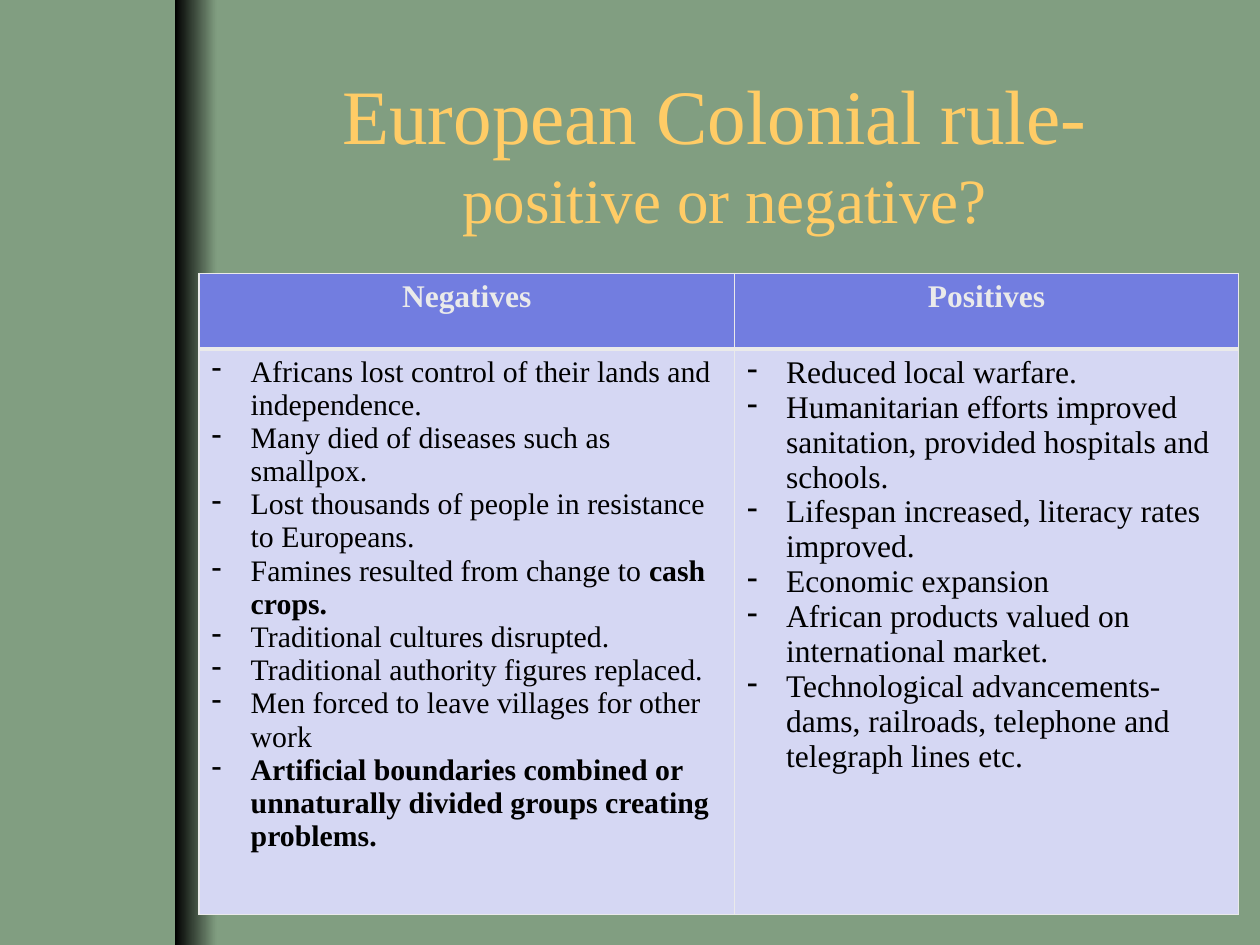
import pptx
import pptx.util
from pptx.dml.color import RGBColor
from pptx.enum.shapes import MSO_SHAPE
from pptx.enum.text import MSO_ANCHOR, PP_ALIGN
from pptx.oxml.ns import qn
from pptx.util import Inches
from lxml import etree

GREEN = RGBColor(0x81, 0x9E, 0x81)
GOLD = RGBColor(0xFF, 0xCC, 0x66)
BLACK = RGBColor(0x00, 0x00, 0x00)
PALE = RGBColor(0xEA, 0xEA, 0xEA)
BLUE = RGBColor(0x72, 0x7D, 0xE0)
LAVENDER = RGBColor(0xD5, 0xD7, 0xF3)

# Each bullet is a list of (text, bold) runs.
NEGATIVES = [
    [("Africans lost control of their lands and independence.", False)],
    [("Many died of diseases such as smallpox.", False)],
    [("Lost thousands of people in resistance to Europeans.", False)],
    [("Famines resulted from change to ", False), ("cash crops.", True)],
    [("Traditional cultures disrupted.", False)],
    [("Traditional authority figures replaced.", False)],
    [("Men forced to leave villages for other work", False)],
    [("Artificial boundaries combined or unnaturally divided groups "
      "creating problems.", True)],
]
POSITIVES = [
    [("Reduced local warfare.", False)],
    [("Humanitarian efforts improved sanitation, provided hospitals and schools.", False)],
    [("Lifespan increased, literacy rates improved.", False)],
    [("Economic expansion", False)],
    [("African products valued on international market.", False)],
    [("Technological advancements- dams, railroads, telephone and "
      "telegraph lines etc.", False)],
]


class SlideBuilder:
    font = "Times New Roman"

    def __init__(self, prs):
        self.s = prs.slides.add_slide(prs.slide_layouts[6])
        fill = self.s.background.fill
        fill.solid()
        fill.fore_color.rgb = GREEN

    def run(self, p, text, size, color, bold=False):
        r = p.add_run()
        r.text = text
        r.font.name = self.font
        r.font.size = pptx.util.Pt(size)
        r.font.bold = bold
        r.font.color.rgb = color

    def gradient_band(self, left, top, width, height, colors):
        sp = self.s.shapes.add_shape(MSO_SHAPE.RECTANGLE, Inches(left), Inches(top),
                                     Inches(width), Inches(height))
        sp.shadow.inherit = False
        sp.line.fill.background()
        sp.fill.gradient()
        sp.fill.gradient_angle = 0
        for i, (stop, color) in enumerate(zip(sp.fill.gradient_stops, colors)):
            stop.position = i
            stop.color.rgb = color

    def title(self, left, top, width, height, lines):
        sp = self.s.shapes.add_textbox(Inches(left), Inches(top),
                                       Inches(width), Inches(height))
        tf = sp.text_frame
        tf.word_wrap = True
        tf.vertical_anchor = MSO_ANCHOR.MIDDLE
        p = tf.paragraphs[0]
        p.alignment = PP_ALIGN.CENTER
        for i, (text, size) in enumerate(lines):
            if i:
                p.add_line_break()
            self.run(p, text, size, GOLD)

    def table(self, left, top, col_widths, row_heights):
        tbl = self.s.shapes.add_table(
            len(row_heights), len(col_widths), Inches(left), Inches(top),
            Inches(sum(col_widths)), Inches(sum(row_heights))).table
        tbl.horz_banding = False
        for col, width in zip(tbl.columns, col_widths):
            col.width = Inches(width)
        for row, height in zip(tbl.rows, row_heights):
            row.height = Inches(height)
        return tbl

    def style_cell(self, cell, color, top=1, bottom=1):
        """Set the four borders, with top and bottom in points, and the fill."""
        tcPr = cell._tc.get_or_add_tcPr()
        for side, width in (("L", 1), ("R", 1), ("T", top), ("B", bottom)):
            ln = etree.SubElement(tcPr, qn("a:ln" + side), w=str(pptx.util.Pt(width)))
            solid = etree.SubElement(ln, qn("a:solidFill"))
            etree.SubElement(solid, qn("a:srgbClr"), val=str(PALE))
        cell.fill.solid()
        cell.fill.fore_color.rgb = color

    def header_cell(self, cell, text):
        self.style_cell(cell, BLUE, bottom=3)
        p = cell.text_frame.paragraphs[0]
        p.alignment = PP_ALIGN.CENTER
        self.run(p, text, 18, PALE, bold=True)

    def bullet_cell(self, cell, bullets, size):
        self.style_cell(cell, LAVENDER, top=3)
        tf = cell.text_frame
        for i, runs in enumerate(bullets):
            p = tf.add_paragraph() if i else tf.paragraphs[0]
            pPr = p._p.get_or_add_pPr()
            pPr.set("marL", str(Inches(0.31)))
            pPr.set("indent", str(-Inches(0.31)))
            etree.SubElement(pPr, qn("a:buChar"), char="-")
            for text, bold in runs:
                self.run(p, text, size, BLACK, bold)


def main():
    prs = pptx.Presentation()
    prs.slide_width, prs.slide_height = Inches(10), Inches(7.5)
    b = SlideBuilder(prs)
    b.gradient_band(1.39, 0, 0.33, 7.5, (BLACK, GREEN))
    b.title(1.5, 0.58, 8.5, 1.25,
            [("European Colonial rule- ", 44), ("positive or negative?", 36)])
    tbl = b.table(1.58, 2.17, (4.25, 4), (0.6, 4.49))
    columns = [("Negatives", NEGATIVES, 17), ("Positives", POSITIVES, 18)]
    for c, (heading, bullets, size) in enumerate(columns):
        b.header_cell(tbl.cell(0, c), heading)
        b.bullet_cell(tbl.cell(1, c), bullets, size)
    prs.save("out.pptx")


if __name__ == "__main__":
    main()
